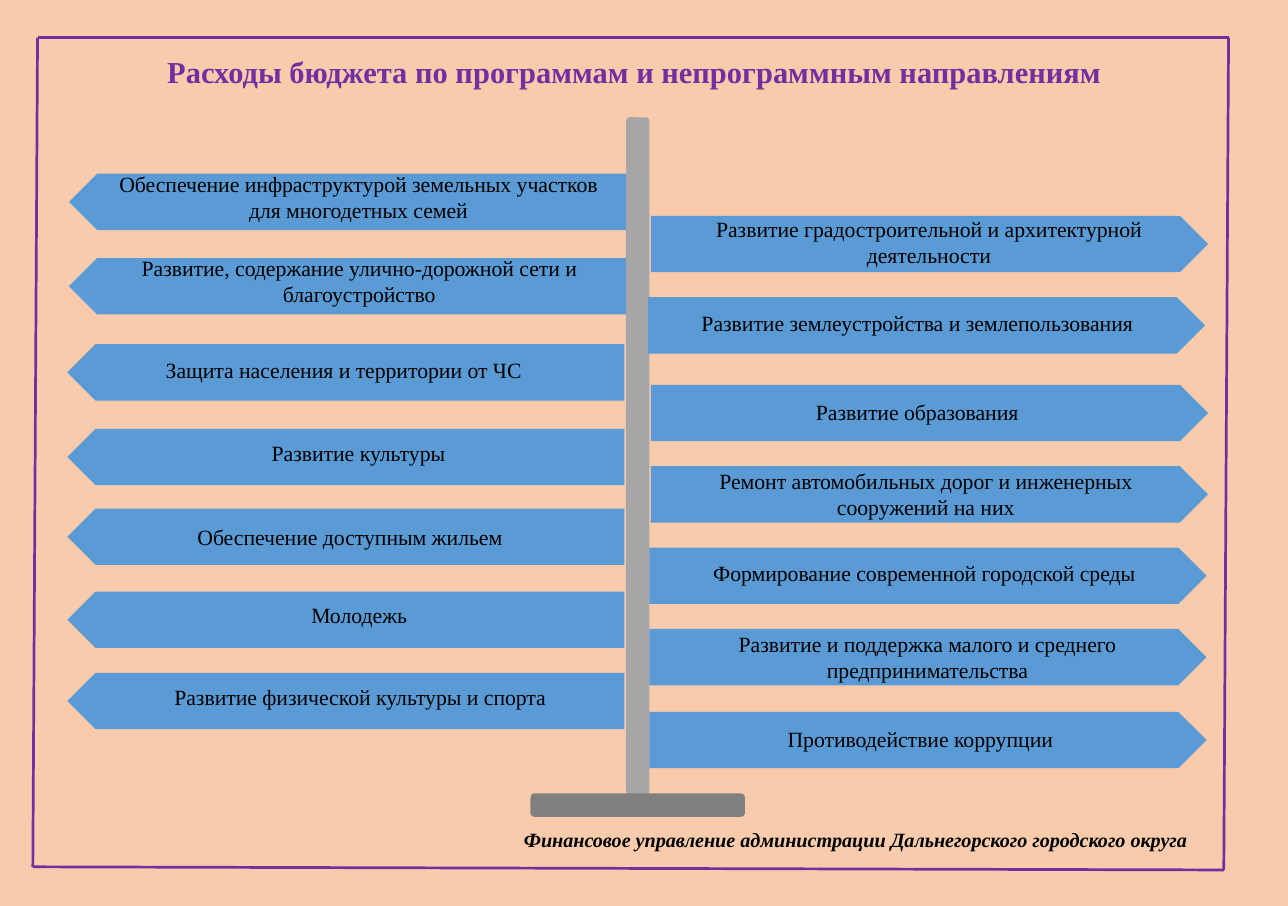
from dataclasses import dataclass

from lxml import etree
from pptx import Presentation
from pptx import util as u
from pptx.dml.color import RGBColor
from pptx.enum import shapes, text
from pptx.oxml.ns import qn


@dataclass(frozen=True)
class Theme:
    font: str = "Times New Roman"
    background: str = "F8CBAD"
    accent: str = "7030A0"
    ink: str = "000000"
    arrow: str = "5B9BD5"
    post: str = "A6A6A6"
    base: str = "808080"
    title_size: float = 14
    label_size: float = 10
    footer_size: float = 9.3
    frame_width: float = 1.25


ARROW_W, ARROW_H = 3.56, 0.36

LEFT_SIGNS = [
    (0.44, 1.11, -0.22, 1.04, 5.02, ["Обеспечение инфраструктурой земельных участков", "для многодетных семей"]),
    (0.44, 1.65, 0.24, 1.58, 4.11, ["Развитие, содержание улично-дорожной сети и", "благоустройство"]),
    (0.43, 2.2, 0.92, 2.23, 2.55, ["Защита населения и территории от ЧС"]),
    (0.43, 2.74, 1.62, 2.76, 1.34, ["Развитие культуры"]),
    (0.43, 3.25, 1.14, 3.3, 2.19, ["Обеспечение доступным жильем"]),
    (0.43, 3.78, 1.88, 3.8, 0.83, ["Молодежь"]),
    (0.43, 4.3, 0.84, 4.32, 2.92, ["Развитие физической культуры и спорта"]),
]
RIGHT_SIGNS = [
    (4.16, 1.38, 4, 1.33, 3.87, ["Развитие градостроительной и архитектурной", "деятельности"]),
    (4.14, 1.9, 4.07, 1.93, 3.58, ["Развитие землеустройства и землепользования"]),
    (4.16, 2.46, 5.1, 2.5, 1.52, ["Развитие образования"]),
    (4.16, 2.98, 3.86, 2.94, 4.11, ["Ремонт автомобильных дорог и инженерных", "сооружений на них"]),
    (4.15, 3.5, 4.41, 3.53, 2.99, ["Формирование современной городской среды"]),
    (4.15, 4.02, 3.87, 3.98, 4.11, ["Развитие и поддержка малого и среднего", "предпринимательства"]),
    (4.15, 4.55, 4.91, 4.59, 1.94, ["Противодействие коррупции"]),
]
FRAME = [(0.24, 0.24), (7.85, 0.24), (7.82, 5.56), (0.21, 5.54)]


class Builder:
    def __init__(self, slide, theme):
        self.s = slide
        self.theme = theme
        fill = slide.background.fill
        fill.solid()
        fill.fore_color.rgb = RGBColor.from_string(theme.background)

    def put_text(self, sp, lines, size, color, align=text.PP_ALIGN.CENTER, wrap=True, **font):
        tf = sp.text_frame
        frame = {
            "word_wrap": wrap,
            "auto_size": text.MSO_AUTO_SIZE.NONE,
            "vertical_anchor": text.MSO_ANCHOR.TOP,
        }
        for name, value in frame.items():
            setattr(tf, name, value)
        for i, line in enumerate(lines):
            p = tf.add_paragraph() if i else tf.paragraphs[0]
            p.alignment = align
            r = p.add_run()
            r.text = line
            values = {"name": self.theme.font, "size": u.Pt(size), **font}
            for name, value in values.items():
                setattr(r.font, name, value)
            r.font.color.rgb = RGBColor.from_string(color)

    def title(self, line, x, y, w, h):
        sp = self.s.shapes.title
        box = {"left": x, "top": y, "width": w, "height": h}
        for name, value in box.items():
            setattr(sp, name, u.Inches(value))
        self.put_text(sp, [line], self.theme.title_size, self.theme.accent, bold=True)

    def text_box(self, lines, x, y, w, h, size, **style):
        sp = self.s.shapes.add_textbox(*map(u.Inches, (x, y, w, h)))
        self.put_text(sp, lines, size, self.theme.ink, **style)

    def shape(self, kind, x, y, w, h, color, rotation=0):
        sp = self.s.shapes.add_shape(kind, *map(u.Inches, (x, y, w, h)))
        sp.shadow.inherit = False
        sp.fill.solid()
        sp.fill.fore_color.rgb = RGBColor.from_string(color)
        sp.line.fill.background()
        sp.rotation = rotation

    def line(self, start, end):
        c = self.s.shapes.add_connector(
            shapes.MSO_CONNECTOR.STRAIGHT, *map(u.Inches, (*start, *end)))
        c.line.color.rgb = RGBColor.from_string(self.theme.accent)
        c.line.width = u.Pt(self.theme.frame_width)
        etree.SubElement(c._element.spPr, qn("a:effectLst"))

    def sign(self, x, y, label_x, label_y, label_w, lines, rotation):
        self.shape(shapes.MSO_SHAPE.PENTAGON, x, y, ARROW_W, ARROW_H,
                   self.theme.arrow, rotation)
        self.text_box(lines, label_x, label_y, label_w, 0.1 + 0.17 * len(lines),
                      self.theme.label_size, wrap=False)


def main():
    prs = Presentation()
    prs.slide_width, prs.slide_height = u.Inches(8.23), u.Inches(5.79)
    theme = Theme()
    b = Builder(prs.slides.add_slide(prs.slide_layouts[5]), theme)

    for start, end in zip(FRAME, FRAME[1:] + FRAME[:1]):
        b.line(start, end)
    b.title("Расходы бюджета по программам и непрограммным направлениям",
            0.24, 0.29, 7.63, 0.34)
    b.text_box(["Финансовое управление администрации Дальнегорского городского округа"],
               3.25, 5.24, 4.74, 0.26, theme.footer_size,
               align=text.PP_ALIGN.LEFT, bold=True, italic=True)

    rounded = shapes.MSO_SHAPE.ROUNDED_RECTANGLE
    b.shape(rounded, 4, 0.75, 0.15, 4.33, theme.post)
    b.shape(rounded, 3.39, 5.07, 1.37, 0.15, theme.base)
    for signs, rotation in ((LEFT_SIGNS, 180), (RIGHT_SIGNS, 0)):
        for sign in signs:
            b.sign(*sign, rotation)

    prs.save("out.pptx")


if __name__ == "__main__":
    main()
